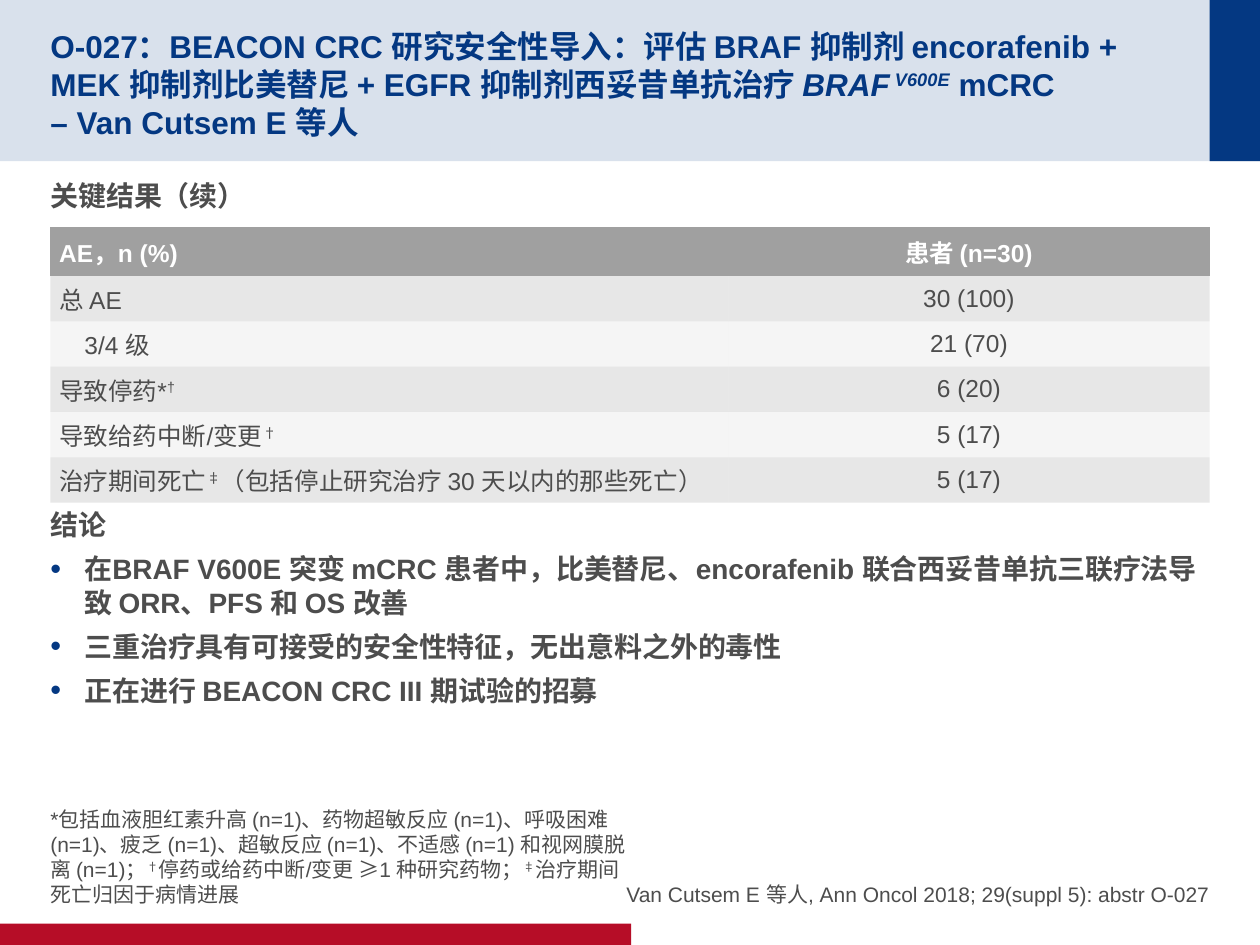
import pptx
import pptx.util
import pptx.dml.color
import pptx.enum.shapes
import pptx.enum.text
import pptx.oxml.ns
import lxml.etree

Inches = pptx.util.Inches
Pt = pptx.util.Pt
qn = pptx.oxml.ns.qn
ANCHOR = pptx.enum.text.MSO_ANCHOR
ALIGN = pptx.enum.text.PP_ALIGN

NAVY, RED, GREY, TEXT, WHITE = "043882", "B60D27", "A0A0A0", "4D4D4D", "FFFFFF"


def paint(fill, color, opacity=100):
    fill.solid()
    fill.fore_color.rgb = pptx.dml.color.RGBColor.from_string(color)
    if opacity < 100:
        srgb = fill._xPr.find(qn("a:solidFill"))[0]
        lxml.etree.SubElement(srgb, qn("a:alpha")).set("val", str(opacity * 1000))


def write(frame, text, size=16, color=TEXT, bold=False, align=ALIGN.LEFT,
          after=0, indent=0, bullet=False):
    """Write one paragraph; text is a string or a list of (string, style) runs.

    Style letters: i = italic, s = superscript. A newline breaks the line.
    """
    paragraph = frame.paragraphs[0]
    if paragraph.runs:
        paragraph = frame.add_paragraph()
    paragraph.alignment = align
    paragraph.space_after = Pt(after)
    properties = paragraph._p.get_or_add_pPr()
    properties.set("marL", str(Inches(indent)))
    if bullet:
        properties.set("indent", str(-Inches(indent)))
        bullet_color = lxml.etree.SubElement(properties, qn("a:buClr"))
        lxml.etree.SubElement(bullet_color, qn("a:srgbClr")).set("val", NAVY)
        lxml.etree.SubElement(properties, qn("a:buSzPct")).set("val", "110000")
        lxml.etree.SubElement(properties, qn("a:buFont")).set("typeface", "Arial")
        lxml.etree.SubElement(properties, qn("a:buChar")).set("char", "•")
    for words, style in [(text, "")] if isinstance(text, str) else text:
        for number, line in enumerate(words.split("\n")):
            if number:
                paragraph.add_line_break()
            run = paragraph.add_run()
            run.text = line
            run.font.name = "Arial"
            run.font.size = Pt(size)
            run.font.bold = bold
            run.font.italic = "i" in style
            paint(run.font.fill, color)
            if "s" in style:
                run._r.get_or_add_rPr().set("baseline", "30000")


deck = pptx.Presentation()
deck.slide_width, deck.slide_height = Inches(10), Inches(7.5)
slide = deck.slides.add_slide(deck.slide_layouts[6])

# Header band, corner block and footer bar
for left, top, width, height, color, opacity in [
    (0, 0, 10, 1.28, NAVY, 15),
    (9.6, 0, 0.4, 1.28, NAVY, 100),
    (0, 7.33, 5.01, 0.17, RED, 100),
]:
    band = slide.shapes.add_shape(
        pptx.enum.shapes.MSO_SHAPE.RECTANGLE,
        Inches(left), Inches(top), Inches(width), Inches(height))
    band.shadow.inherit = False
    band.line.fill.background()
    paint(band.fill, color, opacity)

# Text frames: title, results heading, conclusions, citation, footnote
frames = []
for left, top, width, height, inset_top, anchor in [
    (0.4, 0.2, 9.01, 0.88, 0.05, ANCHOR.MIDDLE),
    (0.4, 1.37, 9.2, 0.4, 0.05, ANCHOR.TOP),
    (0.4, 3.98, 9.2, 2.58, 0.05, ANCHOR.TOP),
    (4.92, 6.67, 4.68, 0.53, 0, ANCHOR.BOTTOM),
    (0.4, 6.67, 4.67, 0.53, 0, ANCHOR.BOTTOM),
]:
    frame = slide.shapes.add_textbox(
        Inches(left), Inches(top), Inches(width), Inches(height)).text_frame
    frame.word_wrap = True
    frame.vertical_anchor = anchor
    frame.margin_left = frame.margin_right = frame.margin_bottom = 0
    frame.margin_top = Inches(inset_top)
    frames.append(frame)
title, results, conclusions, citation, footnote = frames

write(title, [
    ("O-027：BEACON CRC 研究安全性导入：评估 BRAF 抑制剂 encorafenib + "
     "MEK 抑制剂比美替尼 + EGFR 抑制剂西妥昔单抗治疗 ", ""),
    ("BRAF", "i"), (" V600E", "is"), (" mCRC\n– Van Cutsem E 等人", ""),
], size=18, color=NAVY, bold=True)

write(results, "关键结果（续）", bold=True, after=6)

write(conclusions, "结论", bold=True, after=6)
for conclusion in [
    "在BRAF V600E 突变 mCRC 患者中，比美替尼、encorafenib 联合西妥昔单抗三联疗法导致 ORR、PFS 和 OS 改善",
    "三重治疗具有可接受的安全性特征，无出意料之外的毒性",
    "正在进行 BEACON CRC III 期试验的招募",
]:
    write(conclusions, conclusion, bold=True, after=6, indent=0.27, bullet=True)

write(citation, "Van Cutsem E 等人, Ann Oncol 2018; 29(suppl 5): abstr O-027",
      size=12, align=ALIGN.RIGHT, after=4)
write(footnote, [
    ("*包括血液胆红素升高 (n=1)、药物超敏反应 (n=1)、呼吸困难 (n=1)、疲乏 (n=1)、"
     "超敏反应 (n=1)、不适感 (n=1) 和视网膜脱离 (n=1)；", ""),
    ("†", "s"), ("停药或给药中断/变更 ≥1 种研究药物；", ""),
    ("‡", "s"), ("治疗期间死亡归因于病情进展", ""),
], size=12, after=4)

# Adverse event table
events = [
    ("AE，n (%)", "患者 (n=30)"),
    ("总 AE", "30 (100)"),
    ("3/4 级", "21 (70)"),
    ([("导致停药*", ""), ("†", "s")], "6 (20)"),
    ([("导致给药中断/变更", ""), ("†", "s")], "5 (17)"),
    ([("治疗期间死亡", ""), ("‡", "s"),
      ("（包括停止研究治疗 30 天以内的那些死亡）", "")], "5 (17)"),
]
HEADER_HEIGHT, ROW_HEIGHT = 0.39, 0.36
event_table = slide.shapes.add_table(
    len(events), 2, Inches(0.4), Inches(1.8), Inches(9.2),
    Inches(HEADER_HEIGHT + ROW_HEIGHT * (len(events) - 1))).table
# Plain table style without borders
event_table._tbl.tblPr.find(qn("a:tableStyleId")).text = (
    "{2D5ABB26-0587-4C30-8999-92F81FD0307C}")
event_table.columns[0].width = Inches(5.38)
event_table.columns[1].width = Inches(3.82)

for row, entries in enumerate(events):
    header = row == 0
    event_table.rows[row].height = Inches(HEADER_HEIGHT if header else ROW_HEIGHT)
    for column, entry in enumerate(entries):
        cell = event_table.cell(row, column)
        cell.vertical_anchor = ANCHOR.MIDDLE
        cell.margin_left = cell.margin_right = Inches(0.07)
        cell.margin_top = cell.margin_bottom = Inches(0 if header else 0.04)
        paint(cell.fill, GREY, 100 if header else 25 if row % 2 else 10)
        write(cell.text_frame, entry, size=14, bold=header,
              color=WHITE if header else TEXT,
              align=ALIGN.CENTER if column else ALIGN.LEFT,
              indent=0.2 if entry == "3/4 级" else 0)

deck.save("out.pptx")
